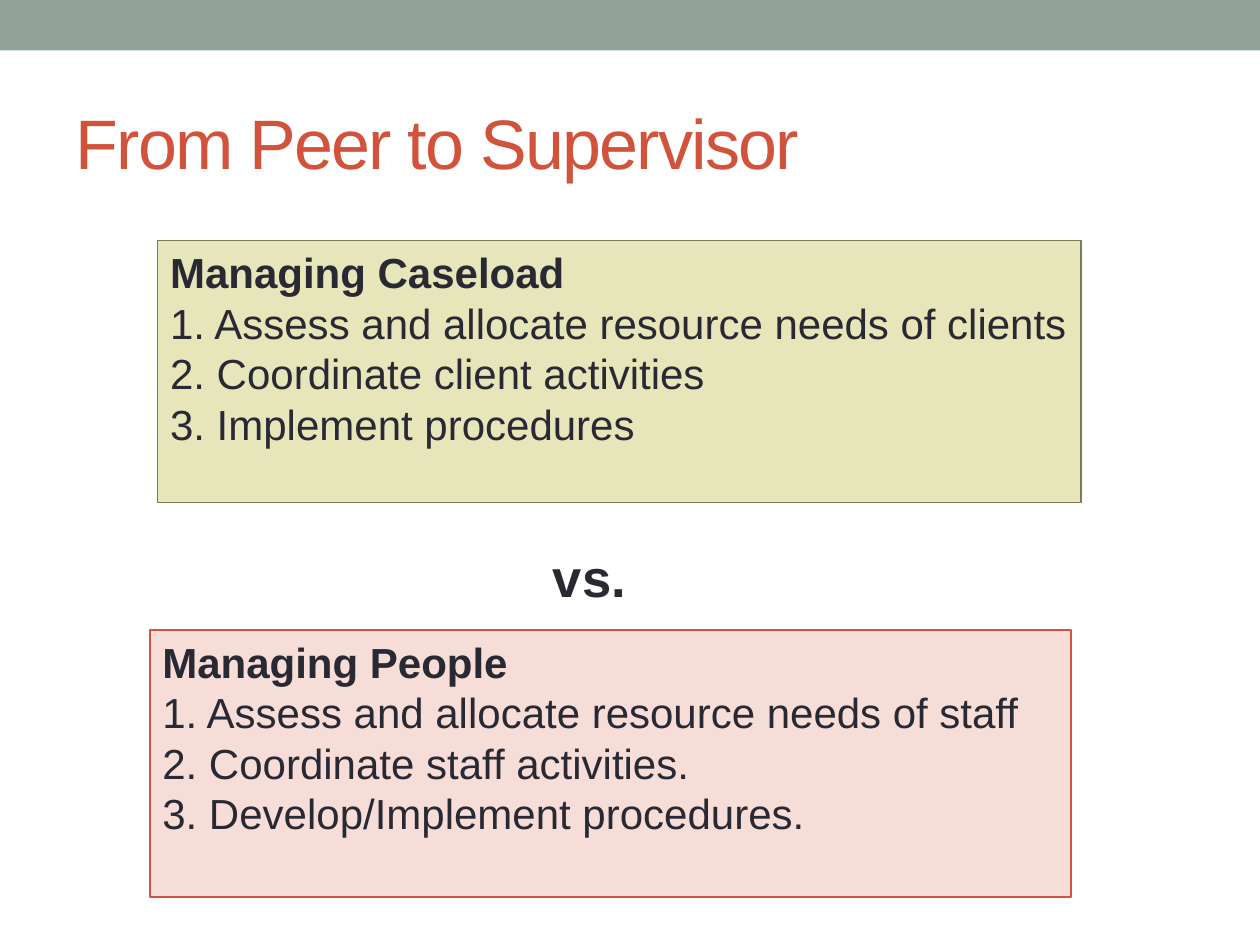
from dataclasses import dataclass

from lxml.etree import SubElement
from pptx import Presentation
from pptx.dml.color import RGBColor
from pptx.enum.shapes import MSO_SHAPE
from pptx.enum.text import MSO_ANCHOR, PP_ALIGN
from pptx.oxml.ns import qn
from pptx.util import Inches, Pt


@dataclass(frozen=True)
class Theme:
    """Colours, font and type sizes of the slide."""
    font: str = "Arial"
    band: str = "93A299"
    accent: str = "D2533C"
    ink: str = "292934"
    caseload_fill: str = "E7E5BA"
    caseload_line: str = "7B7B57"
    people_fill: str = "F6DDD8"
    title_size: int = 40
    versus_size: int = 30
    body_size: int = 24


THEME = Theme()


def place(shape, box):
    """Move and size a shape to a box given in inches."""
    shape.left, shape.top, shape.width, shape.height = map(Inches, box)


def write(paragraph, text, size, color=THEME.ink, bold=False, spacing=None):
    """Write formatted text into a left-aligned paragraph without a bullet."""
    paragraph.alignment = PP_ALIGN.LEFT
    paragraph.space_before = Pt(0)
    properties = paragraph._p.get_or_add_pPr()
    properties.set("marL", "0")
    properties.set("indent", "0")
    SubElement(properties, qn("a:buNone"))
    run = paragraph.add_run()
    run.text = text
    run.font.name = THEME.font
    run.font.size = Pt(size)
    run.font.bold = bold
    run.font.color.rgb = RGBColor.from_string(color)
    if spacing is not None:
        run._r.get_or_add_rPr().set("spc", str(spacing))


def paint(shape, fill, line=None):
    """Give a shape a solid fill and a thin outline or none."""
    shape.fill.solid()
    shape.fill.fore_color.rgb = RGBColor.from_string(fill)
    if line:
        shape.line.color.rgb = RGBColor.from_string(line)
        shape.line.width = Pt(0.75)
    else:
        shape.line.fill.background()


def add_band(slide, box):
    """Draw the coloured band along the top edge."""
    band = slide.shapes.add_shape(MSO_SHAPE.RECTANGLE, *map(Inches, box))
    band.shadow.inherit = False
    paint(band, THEME.band)


def fill_title(title, box, text):
    """Place and write the slide title."""
    place(title, box)
    title.text_frame.vertical_anchor = MSO_ANCHOR.MIDDLE
    write(title.text_frame.paragraphs[0], text, THEME.title_size,
          color=THEME.accent, spacing=-100)


def fill_panel(panel, box, heading, items, fill, line):
    """Place a panel with a bold heading and numbered items."""
    place(panel, box)
    paint(panel, fill, line)
    frame = panel.text_frame
    frame.word_wrap = True
    frame.vertical_anchor = MSO_ANCHOR.TOP
    write(frame.paragraphs[0], heading, THEME.body_size, bold=True)
    for number, item in enumerate(items, start=1):
        write(frame.add_paragraph(), f"{number}. {item}", THEME.body_size)


def add_versus(slide, box):
    """Add the bold word between the two panels."""
    label = slide.shapes.add_textbox(*map(Inches, box))
    label.text_frame.word_wrap = False
    write(label.text_frame.paragraphs[0], "vs.", THEME.versus_size, bold=True)


def main():
    """Build and save the slide."""
    presentation = Presentation()
    presentation.slide_width = Inches(10)
    presentation.slide_height = Inches(7.5)
    slide = presentation.slides.add_slide(presentation.slide_layouts[1])
    add_band(slide, (0, 0, 10, 0.4))
    fill_title(slide.shapes.title, (0.5, 0.58, 9, 1.08), "From Peer to Supervisor")
    fill_panel(slide.placeholders[1], (1.25, 1.91, 7.33, 2.08), "Managing Caseload",
               ["Assess and allocate resource needs of clients",
                "Coordinate client activities",
                "Implement procedures"],
               THEME.caseload_fill, THEME.caseload_line)
    people = slide.shapes.add_shape(MSO_SHAPE.RECTANGLE, 0, 0, 0, 0)
    people.shadow.inherit = False
    fill_panel(people, (1.19, 5, 7.31, 2.12), "Managing People",
               ["Assess and allocate resource needs of staff",
                "Coordinate staff activities.",
                "Develop/Implement procedures."],
               THEME.people_fill, THEME.accent)
    add_versus(slide, (4.29, 4.28, 0.89, 0.61))
    presentation.save("out.pptx")


if __name__ == "__main__":
    main()
